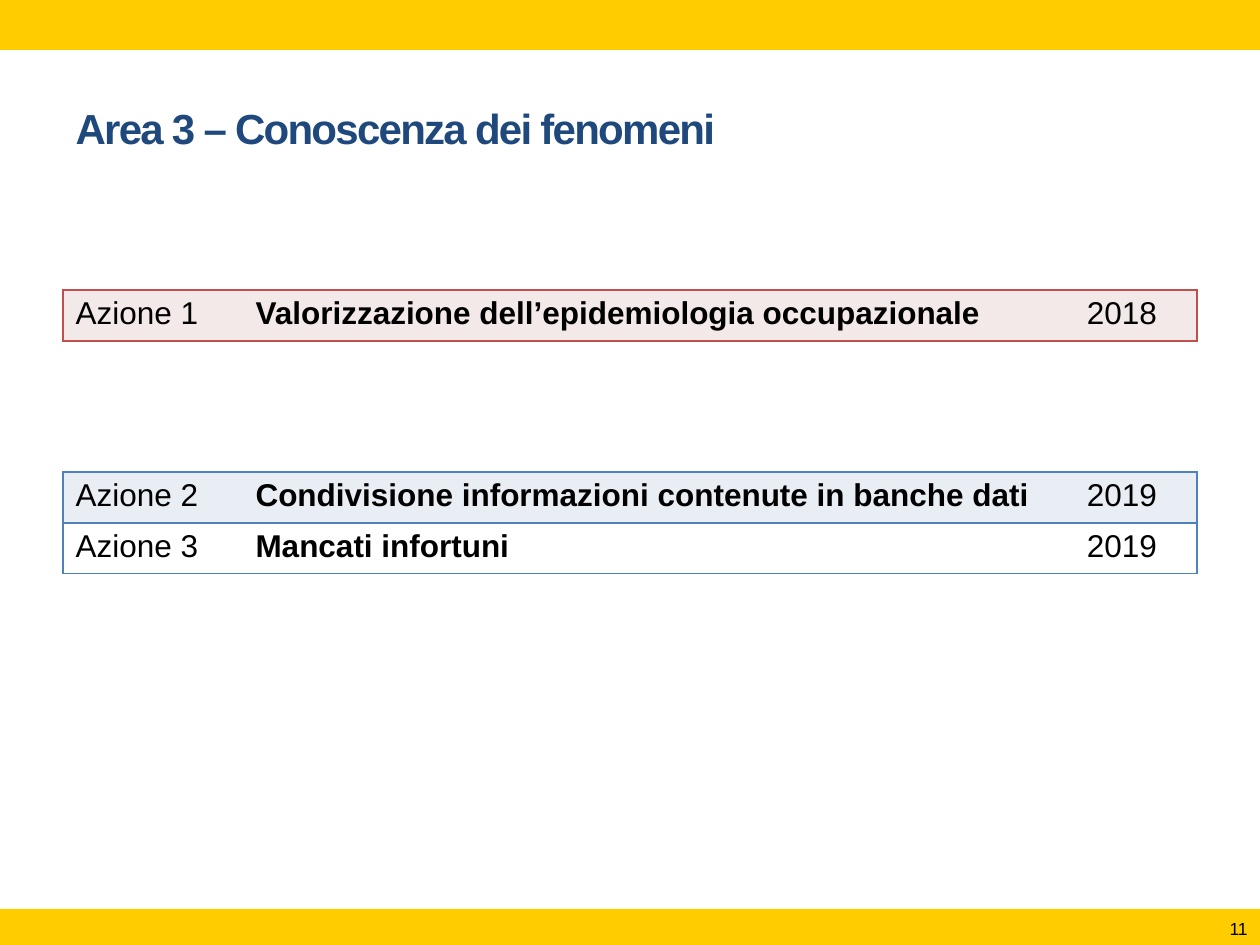
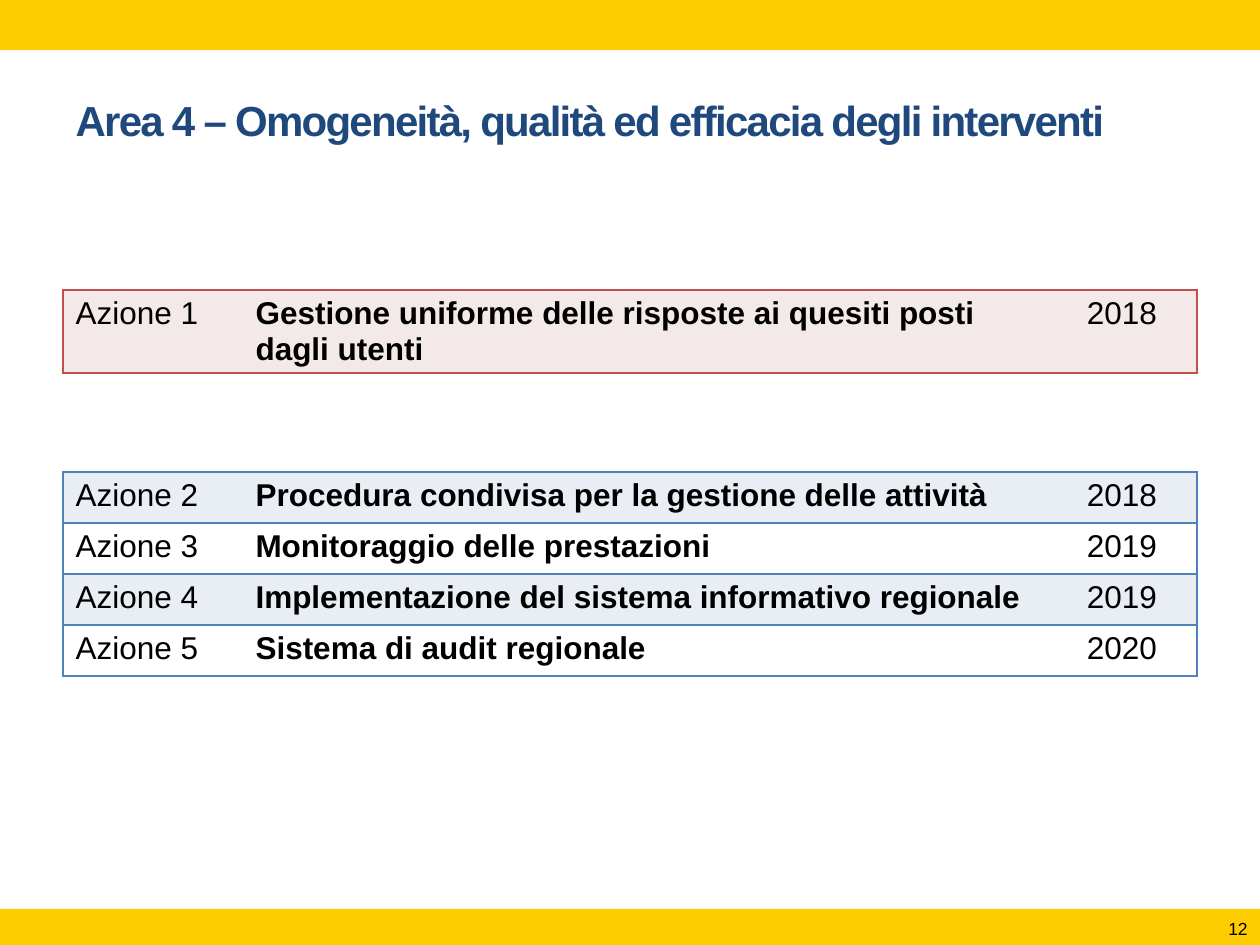
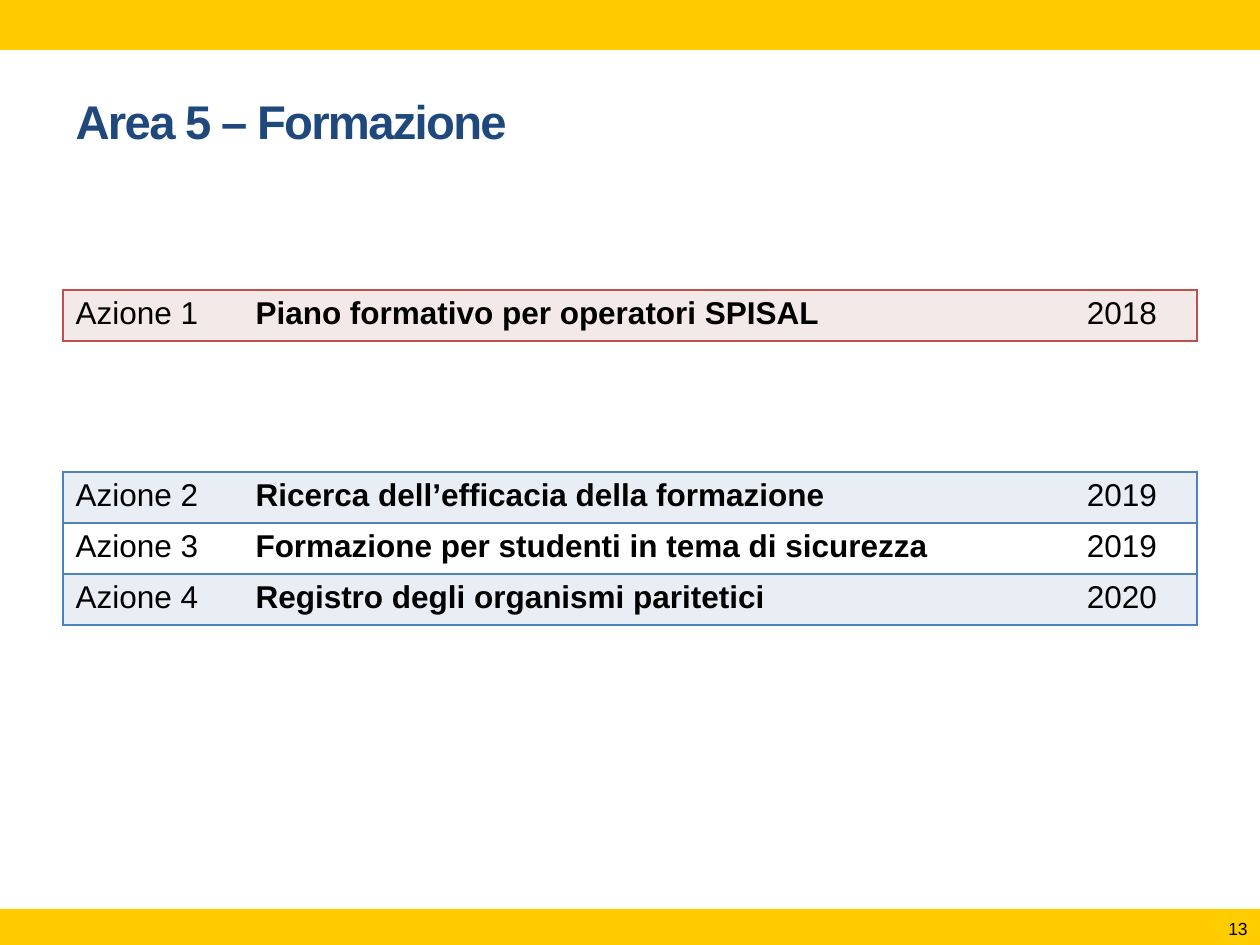
from dataclasses import dataclass

from lxml import etree
from pptx import Presentation
from pptx import util as u
from pptx.dml.color import RGBColor
from pptx.enum import shapes, text
from pptx.oxml.ns import qn

WIDE, HIGH, DPI = 1260, 945, 126
EDGE, SPAN = 63, 1134
COLS = (180, 804, 150)
ROW = 51

GOLD = RGBColor(0xFF, 0xCC, 0x00)
NAVY = RGBColor(0x1F, 0x49, 0x7D)
BLACK = RGBColor(0x00, 0x00, 0x00)
WHITE = RGBColor(0xFF, 0xFF, 0xFF)
RED = RGBColor(0xC0, 0x50, 0x4D)
ROSE = RGBColor(0xF4, 0xE9, 0xE9)
BLUE = RGBColor(0x4F, 0x81, 0xBD)
ICE = RGBColor(0xE9, 0xED, 0xF4)


@dataclass(frozen=True)
class Act:
    goal: str
    year: str
    high: int = ROW


@dataclass(frozen=True)
class Look:
    top: int
    line: RGBColor
    fills: tuple[RGBColor, ...]


@dataclass(frozen=True)
class Area:
    title: str
    acts: tuple[Act, ...]
    size: int = 24
    lift: int = 42  # space kept free below the title text


FIRST = Look(290, RED, (ROSE,))
LATER = Look(472, BLUE, (ICE, WHITE))

AREAS = (
    Area("Area 3 – Conoscenza dei fenomeni", (
        Act("Valorizzazione dell’epidemiologia occupazionale", "2018"),
        Act("Condivisione informazioni contenute in banche dati", "2019"),
        Act("Mancati infortuni", "2019", 28),
    ), lift=26),
    Area("Area 4 – Omogeneità, qualità ed efficacia degli interventi", (
        Act("Gestione uniforme delle risposte ai quesiti posti dagli utenti", "2018"),
        Act("Procedura condivisa per la gestione delle attività", "2018"),
        Act("Monitoraggio delle prestazioni", "2019"),
        Act("Implementazione del sistema informativo regionale", "2019"),
        Act("Sistema di audit regionale", "2020"),
    )),
    Area("Area 5 – Formazione", (
        Act("Piano formativo per operatori SPISAL", "2018"),
        Act("Ricerca dell’efficacia della formazione", "2019"),
        Act("Formazione per studenti in tema di sicurezza", "2019"),
        Act("Registro degli organismi paritetici", "2020"),
    ), size=27),
)


def px(num: int) -> u.Emu:
    return u.Emu(round(num * 914400 / DPI))


def write(frame, words: str, *, size: int = 18, color: RGBColor = BLACK,
          bold: bool = False, align=text.PP_ALIGN.LEFT, track: int = 0) -> None:
    """Fill a text frame with one line of text; track is in 1/100 point."""
    para = frame.paragraphs[0]
    para.alignment = align
    run = para.add_run()
    run.text = words
    font = run.font
    font.name, font.size, font.bold = "Arial", u.Pt(size), bold
    font.color.rgb = color
    if track:
        font._element.set("spc", str(track))


def band(slide, top: int, high: int) -> None:
    bar = slide.shapes.add_shape(shapes.MSO_SHAPE.RECTANGLE,
                                 0, px(top), px(WIDE), px(high))
    bar.shadow.inherit = False
    bar.fill.solid()
    bar.fill.fore_color.rgb = GOLD
    bar.line.fill.background()


def head(slide, area: Area) -> None:
    title = slide.shapes.title
    title.left, title.top = px(EDGE), px(73)
    title.width, title.height = px(SPAN), px(136)
    frame = title.text_frame
    frame.auto_size = text.MSO_AUTO_SIZE.NONE
    frame.word_wrap = True
    frame.vertical_anchor = text.MSO_ANCHOR.MIDDLE
    frame.margin_bottom = px(6 + area.lift)
    write(frame, area.title, size=area.size, color=NAVY, bold=True, track=-100)


def foot(slide, page: int) -> None:
    box = slide.shapes.add_textbox(px(1076), px(911), px(184), px(34))
    frame = box.text_frame
    frame.word_wrap = True
    frame.vertical_anchor = text.MSO_ANCHOR.MIDDLE
    write(frame, str(page), size=10, align=text.PP_ALIGN.RIGHT)


def edge(cell, sides: str, color: RGBColor) -> None:
    """Line the given sides (of L, R, T, B) and clear the others."""
    props = cell._tc.get_or_add_tcPr()
    for side in "LRTB":
        line = etree.SubElement(props, qn(f"a:ln{side}"), w=str(u.Pt(1)))
        if side in sides:
            fill = etree.SubElement(line, qn("a:solidFill"))
            etree.SubElement(fill, qn("a:srgbClr"), val=str(color))
        else:
            etree.SubElement(line, qn("a:noFill"))


def grid(slide, acts: tuple[Act, ...], start: int, look: Look) -> None:
    """Draw a table of actions numbered from start."""
    high = sum(act.high for act in acts)
    table = slide.shapes.add_table(len(acts), len(COLS), px(EDGE), px(look.top),
                                   px(SPAN), px(high)).table
    table.first_row = table.horz_banding = False
    for col, wide in zip(table.columns, COLS):
        col.width = px(wide)
    for i, act in enumerate(acts):
        table.rows[i].height = px(act.high)
        words = (f"Azione {start + i}", act.goal, act.year)
        for j, (word, sides) in enumerate(zip(words, ("LTB", "TB", "RTB"))):
            cell = table.cell(i, j)
            edge(cell, sides, look.line)
            cell.fill.solid()
            cell.fill.fore_color.rgb = look.fills[i % len(look.fills)]
            align = text.PP_ALIGN.CENTER if j == 2 else text.PP_ALIGN.LEFT
            write(cell.text_frame, word, bold=j == 1, align=align)


def main() -> None:
    deck = Presentation()
    deck.slide_width, deck.slide_height = px(WIDE), px(HIGH)
    for page, area in enumerate(AREAS, 11):
        slide = deck.slides.add_slide(deck.slide_layouts[5])
        band(slide, 0, 50)
        band(slide, 909, 36)
        head(slide, area)
        grid(slide, area.acts[:1], 1, FIRST)
        foot(slide, page)
        grid(slide, area.acts[1:], 2, LATER)
    deck.save("out.pptx")


if __name__ == "__main__":
    main()
